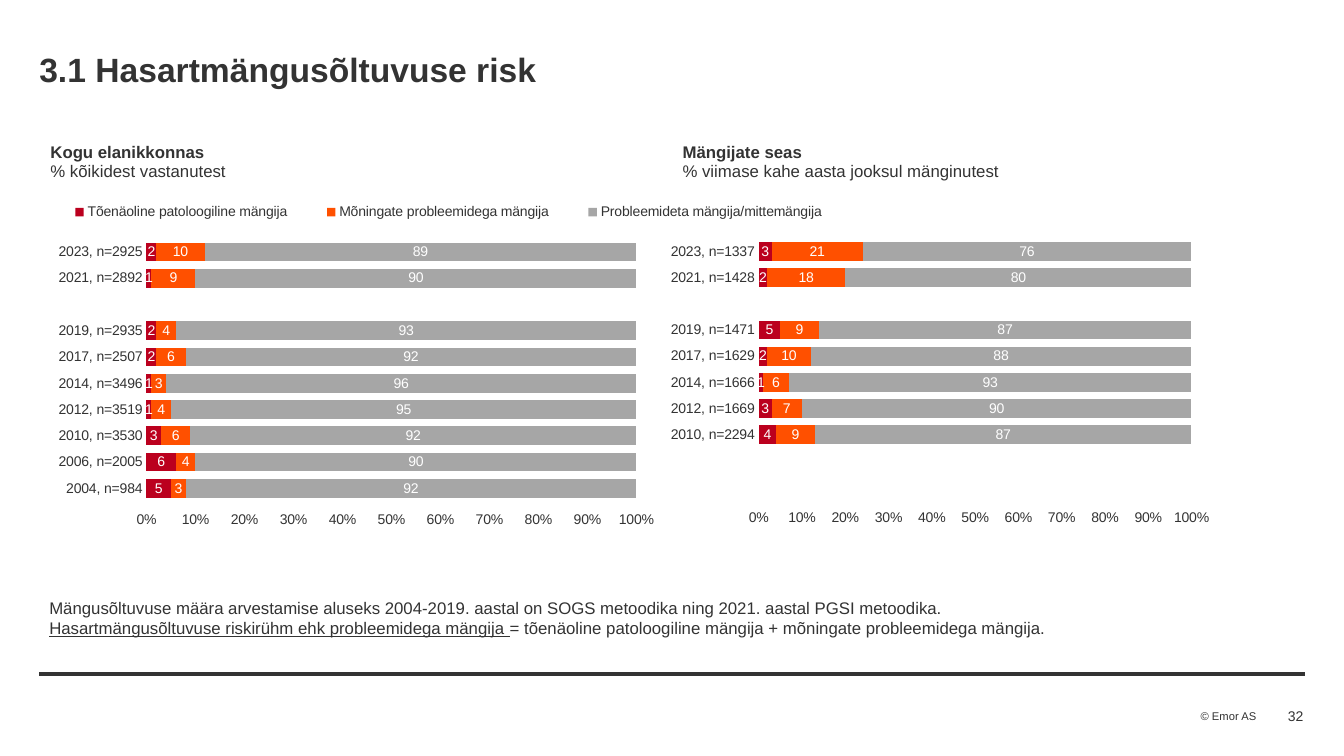
from lxml import etree
from pptx import Presentation, util as u
from pptx.chart import data
from pptx.dml.color import RGBColor
from pptx.enum import chart as ch, shapes, text
from pptx.oxml import ns

DARK = RGBColor(0x33, 0x33, 0x33)
WHITE = RGBColor(0xFF, 0xFF, 0xFF)
RED = RGBColor(0xBB, 0x00, 0x1E)
ORANGE = RGBColor(0xFF, 0x50, 0x00)
GREY = RGBColor(0xA6, 0xA6, 0xA6)
FILLS = (RED, ORANGE, GREY)
FONT = "Arial"


class Deck:
    """Slide builder that takes places as percent shares of the slide."""

    def __init__(self):
        self.prs = Presentation()
        self.prs.slide_width = u.Inches(13.33)
        self.prs.slide_height = u.Inches(7.5)
        self.slide = self.prs.slides.add_slide(self.prs.slide_layouts[6])

    def place(self, *shares):
        sides = (self.prs.slide_width, self.prs.slide_height) * 2
        return [u.Emu(round(side * share / 100)) for side, share in zip(sides, shares)]

    def style(self, font, size, color=DARK, bold=False):
        font.name, font.size, font.bold = FONT, u.Pt(size), bold
        font.color.rgb = color

    def text(self, box, words, size, bold=False, right=False, inset=False,
             wrap=True, mid=False):
        frame = self.slide.shapes.add_textbox(*self.place(*box)).text_frame
        frame.word_wrap = wrap
        if mid:
            frame.vertical_anchor = text.MSO_ANCHOR.MIDDLE
        if not inset:
            frame.margin_left = frame.margin_right = 0
            frame.margin_top = frame.margin_bottom = 0
        frame.text = words
        for para in frame.paragraphs:
            para.alignment = text.PP_ALIGN.RIGHT if right else text.PP_ALIGN.LEFT
            for run in para.runs:
                self.style(run.font, size, bold=bold)
        return frame

    def line(self, left, top, right, width):
        rule = self.slide.shapes.add_connector(
            shapes.MSO_CONNECTOR.STRAIGHT, *self.place(left, top, right, top))
        rule.line.color.rgb = DARK
        rule.line.width = u.Pt(width)
        etree.SubElement(rule.element.spPr, ns.qn("a:effectLst"))

    def heads(self, box, cells):
        table = self.slide.shapes.add_table(1, len(cells), *self.place(*box)).table
        for cell, words in zip(table.rows[0].cells, cells):
            cell.fill.background()
            para = cell.text_frame.paragraphs[0]
            para.text = words
            for run, bold in zip(para.runs, (True, False)):
                self.style(run.font, 12, bold=bold)

    def layout(self, node, index, share, inner=False):
        for old in node.findall(ns.qn("c:layout")):
            node.remove(old)
        outer = etree.Element(ns.qn("c:layout"))
        manual = etree.SubElement(outer, ns.qn("c:manualLayout"))
        pairs = [("layoutTarget", "inner")] if inner else []
        pairs += [("xMode", "edge"), ("yMode", "edge")]
        pairs += zip("xywh", share)
        for tag, val in pairs:
            etree.SubElement(manual, ns.qn("c:" + tag)).set("val", str(val))
        node.insert(index, outer)

    def bars(self, box, plot, cats, series, key=None):
        info = data.CategoryChartData()
        info.categories = cats
        for name, vals in series:
            info.add_series(name, vals)
        chart = self.slide.shapes.add_chart(
            ch.XL_CHART_TYPE.BAR_STACKED_100, *self.place(*box), info).chart
        self.style(chart.font, 10)
        chart.has_title = False
        chart.has_legend = key is not None
        if key:
            chart.legend.position = ch.XL_LEGEND_POSITION.TOP
            chart.legend.include_in_layout = False
            self.layout(chart.element.find(".//" + ns.qn("c:legend")), 1, key)
        self.layout(chart.element.find(".//" + ns.qn("c:plotArea")), 0, plot, True)

        for axis in (chart.category_axis, chart.value_axis):
            axis.has_major_gridlines = False
            axis.major_tick_mark = axis.minor_tick_mark = ch.XL_TICK_MARK.NONE
            axis.format.line.fill.background()
        chart.category_axis.reverse_order = True
        scale = chart.value_axis
        scale.tick_label_position = ch.XL_TICK_LABEL_POSITION.HIGH
        scale.minimum_scale, scale.maximum_scale, scale.major_unit = 0, 1, 0.1
        scale.tick_labels.number_format = "0%"
        scale.tick_labels.number_format_is_linked = False

        bar = chart.plots[0]
        bar.gap_width, bar.overlap, bar.vary_by_categories = 40, 100, False
        for item, fill in zip(bar.series, FILLS):
            item.format.fill.solid()
            item.format.fill.fore_color.rgb = fill
            tags = item.data_labels
            tags.show_value = True
            tags.number_format = "#,##0"
            tags.number_format_is_linked = False
            tags.position = ch.XL_LABEL_POSITION.CENTER
            self.style(tags.font, 10, WHITE)


def main():
    deck = Deck()
    deck.line(2.93, 89.2, 97.07, 3)
    deck.text((89.33, 93.87, 4.2, 1.73), "© Emor AS", 8, wrap=False)
    deck.text((2.93, 6.27, 94.07, 5.87), "3.1 Hasartmängusõltuvuse risk", 24,
              bold=True, mid=True)
    note = deck.text(
        (2.93, 78.4, 94.07, 6.67),
        "Mängusõltuvuse määra arvestamise aluseks 2004-2019. aastal on SOGS metoodika "
        "ning 2021. aastal PGSI metoodika.\n"
        "Hasartmängusõltuvuse riskirühm ehk probleemidega mängija ", 12, inset=True)
    last = note.paragraphs[1]
    last.runs[0].font.underline = True
    rest = last.add_run()
    rest.text = "= tõenäoline patoloogiline mängija + mõningate probleemidega mängija."
    deck.style(rest.font, 12)

    deck.bars(
        (3, 25.87, 60.75, 44), (0.13, 0.13, 0.6, 0.79),
        ["2023, n=2925", "2021, n=2892", "", "2019, n=2935", "2017, n=2507",
         "2014, n=3496", "2012, n=3519", "2010, n=3530", "2006, n=2005", "2004, n=984"],
        [("Tõenäoline patoloogiline mängija", [2, 1, None, 2, 2, 1, 1, 3, 6, 5]),
         ("Mõningate probleemidega mängija", [10, 9, None, 4, 6, 3, 4, 6, 4, 3]),
         ("Probleemideta mängija/mittemängija",
          [89, 90, None, 93, 92, 96, 95, 92, 90, 92])],
        key=(0, 0.01, 1, 0.08))
    deck.heads((3, 18.27, 94.07, 5.47),
               ["Kogu elanikkonnas\n% kõikidest vastanutest",
                "Mängijate seas\n% viimase kahe aasta jooksul mänginutest"])
    deck.bars(
        (48.76, 29.07, 48.07, 40.8), (0.16, 0.06, 0.67, 0.85),
        ["2023, n=1337", "2021, n=1428", "", "2019, n=1471", "2017, n=1629",
         "2014, n=1666", "2012, n=1669", "2010, n=2294", "", ""],
        [("Series 1", [3, 2, None, 5, 2, 1, 3, 4, None, None]),
         ("Series 2", [21, 18, None, 9, 10, 6, 7, 9, None, None]),
         ("Series 3", [76, 80, None, 87, 88, 93, 90, 87, None, None])])
    deck.text((89.03, 93.2, 7.95, 2.93), "32", 10, right=True, mid=True)
    deck.prs.save("out.pptx")


if __name__ == "__main__":
    main()
